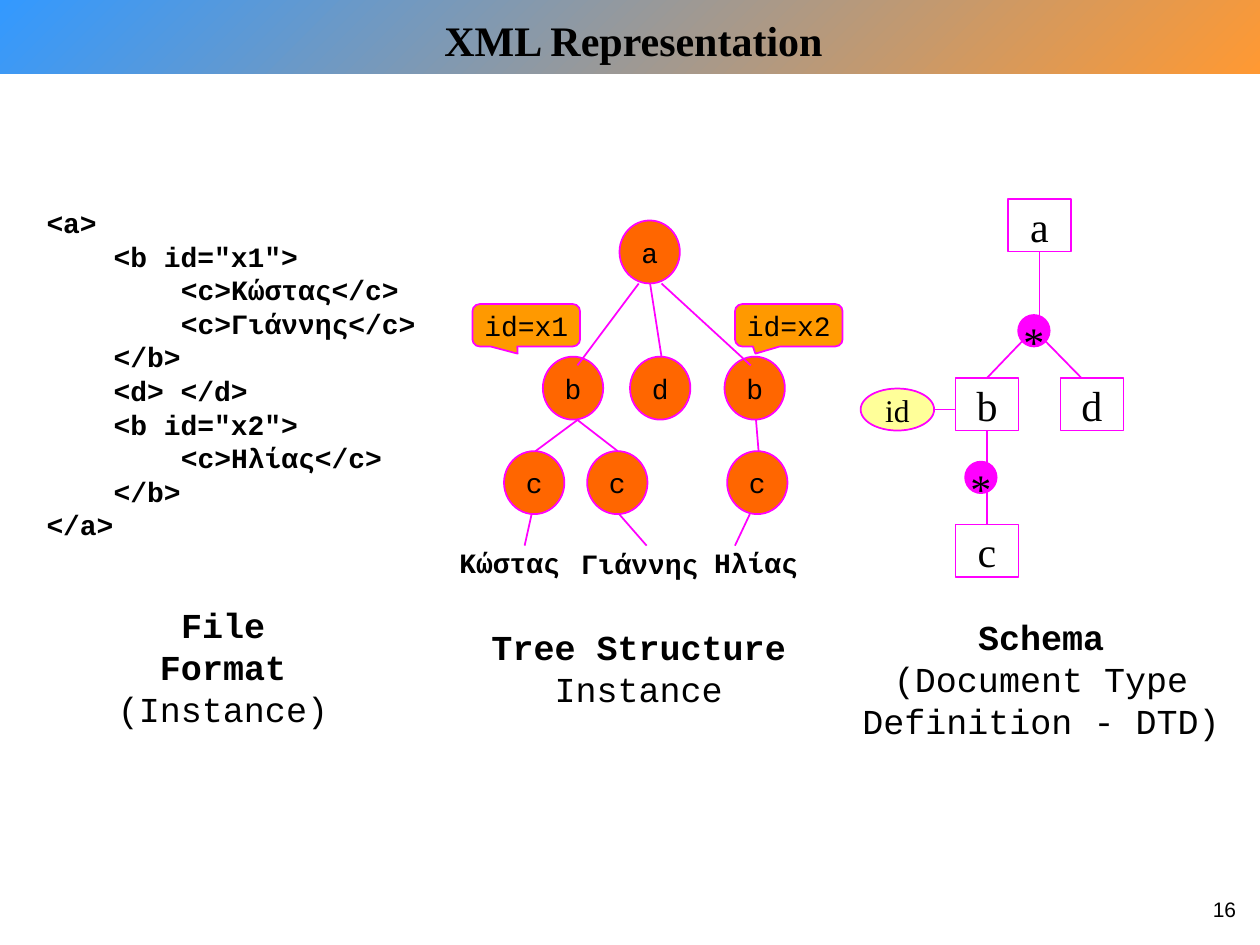
"""Build a slide showing XML as a file, as a tree and as a schema."""
import pptx
import pptx.dml.color
import pptx.enum.shapes
import pptx.enum.text
import pptx.oxml.ns
import pptx.util
import lxml.etree

Pt = pptx.util.Pt
Shapes = pptx.enum.shapes.MSO_SHAPE
Align = pptx.enum.text.PP_ALIGN
Anchor = pptx.enum.text.MSO_ANCHOR

MONO = "Courier New"
SERIF = "Times New Roman"


def color(value):
    return pptx.dml.color.RGBColor.from_string(value)


class Diagram:
    """Hold the style and the current slide, and add elements to it."""

    line_color = "FF00FF"
    text_color = "000000"
    code_indent = 38.4

    def __init__(self, slide):
        self.slide = slide

    def styled_run(self, paragraph, text, size, font, bold=False):
        run = paragraph.add_run()
        run.text = text
        run.font.size = Pt(size)
        run.font.name = font
        run.font.bold = bold
        run.font.color.rgb = color(self.text_color)

    def band(self, width, height, start, end):
        shape = self.slide.shapes.add_shape(Shapes.RECTANGLE, 0, 0, Pt(width), Pt(height))
        shape.shadow.inherit = False
        shape.line.fill.background()
        shape.fill.gradient()
        shape.fill.gradient_angle = 315
        for stop, value in zip(shape.fill.gradient_stops, (start, end)):
            stop.color.rgb = color(value)

    def node(self, kind, box, fill, text, size, font, spacing=None):
        shape = self.slide.shapes.add_shape(kind, *map(Pt, box))
        shape.shadow.inherit = False
        shape.fill.solid()
        shape.fill.fore_color.rgb = color(fill)
        shape.line.color.rgb = color(self.line_color)
        shape.line.width = Pt(1)
        frame = shape.text_frame
        frame.word_wrap = False
        frame.vertical_anchor = Anchor.MIDDLE
        paragraph = frame.paragraphs[0]
        paragraph.alignment = Align.CENTER
        if spacing:
            paragraph.line_spacing = spacing
        self.styled_run(paragraph, text, size, font)
        return shape

    def tree_node(self, left, top, text):
        self.node(Shapes.OVAL, (left, top, 34.5, 36), "FF6600", text, 16, MONO)

    def callout(self, left, text, tip):
        shape = self.node(Shapes.ROUNDED_RECTANGULAR_CALLOUT, (left, 173.8, 61.5, 24.2),
                          "FF9900", text, 16, MONO)
        for index, value in enumerate((tip, 0.67, 0.17)):
            shape.adjustments[index] = value

    def schema_box(self, left, top, text):
        self.node(Shapes.RECTANGLE, (left, top, 36, 30), "FFFFFF", text, 24, SERIF)

    def star(self, left, top):
        self.node(Shapes.OVAL, (left, top, 18, 18), self.line_color, "*", 24, SERIF, 1.4)

    def edge(self, *ends):
        connector = self.slide.shapes.add_connector(
            pptx.enum.shapes.MSO_CONNECTOR.STRAIGHT, *map(Pt, ends))
        connector.line.color.rgb = color(self.line_color)
        connector.line.width = Pt(1)
        properties = connector._element.spPr
        lxml.etree.SubElement(properties, pptx.oxml.ns.qn("a:effectLst"))

    def text(self, box, lines, size, font, align=Align.LEFT, wrap=False):
        frame = self.slide.shapes.add_textbox(*map(Pt, box)).text_frame
        frame.word_wrap = wrap
        for index, (text, bold, level) in enumerate(lines):
            paragraph = frame.add_paragraph() if index else frame.paragraphs[0]
            paragraph.alignment = align
            if level:
                indent = Pt(level * self.code_indent)
                paragraph._p.get_or_add_pPr().set("marL", str(indent))
            self.styled_run(paragraph, text, size, font, bold)

    def caption(self, box, heading, *details, wrap=False):
        lines = [(heading, True, 0)] + [(detail, False, 0) for detail in details]
        self.text(box, lines, 20, MONO, Align.CENTER, wrap)


def add_file_format(diagram):
    code = [(0, "<a>"), (1, '<b id="x1">'), (2, "<c>Κώστας</c>"),
            (2, "<c>Γιάννης</c>"), (1, "</b>"), (1, "<d> </d>"),
            (1, '<b id="x2">'), (2, "<c>Ηλίας</c>"), (1, "</b>"), (0, "</a>")]
    lines = [(text, True, level) for level, text in code]
    diagram.text((19.5, 114, 256.5, 199.5), lines, 16, MONO, wrap=True)
    diagram.caption((55.5, 341.5, 144, 79.5), "File Format", "(Instance)", wrap=True)


def add_tree(diagram):
    levels = {126: [(354, "a")],
              203.8: [(310.2, "b"), (360, "d"), (414, "b")],
              257.8: [(288, "c"), (335.5, "c"), (415.5, "c")]}
    for top, nodes in levels.items():
        for left, name in nodes:
            diagram.tree_node(left, top, name)
    diagram.callout(270, "id=x1", -0.08)
    diagram.callout(420, "id=x2", -0.31)

    edges = {(162, 208.8): [(365, 330), (378, 429)],
             (162, 203.8): [(371.5, 378)],
             (240, 257.8): [(330, 306), (330, 353), (432, 433.5)],
             (293.8, 311.8): [(303.8, 299.8), (353.8, 369.5), (428.5, 420)]}
    for (top, bottom), spans in edges.items():
        for start, end in spans:
            diagram.edge(start, top, end, bottom)

    for left, top, width, name in [(255.5, 308, 72, "Κώστας"),
                                   (325, 309, 82, "Γιάννης"),
                                   (401, 308, 62.5, "Ηλίας")]:
        diagram.text((left, top, width, 26.5), [(name, True, 0)], 16, MONO)
    diagram.caption((267.8, 353.8, 194.5, 55.5), "Tree Structure", "Instance")


def add_schema(diagram):
    for ends in [(510, 234, 546, 234), (564, 245.5, 564, 299.5),
                 (594, 144, 594, 186), (587.5, 191.5, 564, 216),
                 (594, 191.5, 618, 216)]:
        diagram.edge(*ends)
    for left, top, name in [(576, 113.8, "a"), (546, 216, "b"),
                            (606, 216, "d"), (546, 299.8, "c")]:
        diagram.schema_box(left, top, name)
    diagram.star(551.5, 263.8)
    diagram.star(581.8, 180)
    diagram.node(Shapes.OVAL, (491.8, 222, 42, 24), "FFFF99", "id", 18, SERIF)
    diagram.caption((484.5, 348, 221, 80), "Schema", "(Document Type", "Definition - DTD)")


def main():
    presentation = pptx.Presentation()
    presentation.slide_width = Pt(720)
    presentation.slide_height = Pt(540)
    slide = presentation.slides.add_slide(presentation.slide_layouts[6])
    diagram = Diagram(slide)
    diagram.band(720, 42, "3399FF", "FF9933")
    diagram.text((2, 5, 720, 36.5), [("XML Representation", True, 0)], 24, SERIF,
                 Align.CENTER, True)
    add_file_format(diagram)
    add_tree(diagram)
    add_schema(diagram)
    diagram.text((683.5, 508.5, 30, 28.5), [("16", False, 0)], 12, "Arial",
                 Align.RIGHT, True)
    presentation.save("out.pptx")


if __name__ == "__main__":
    main()
